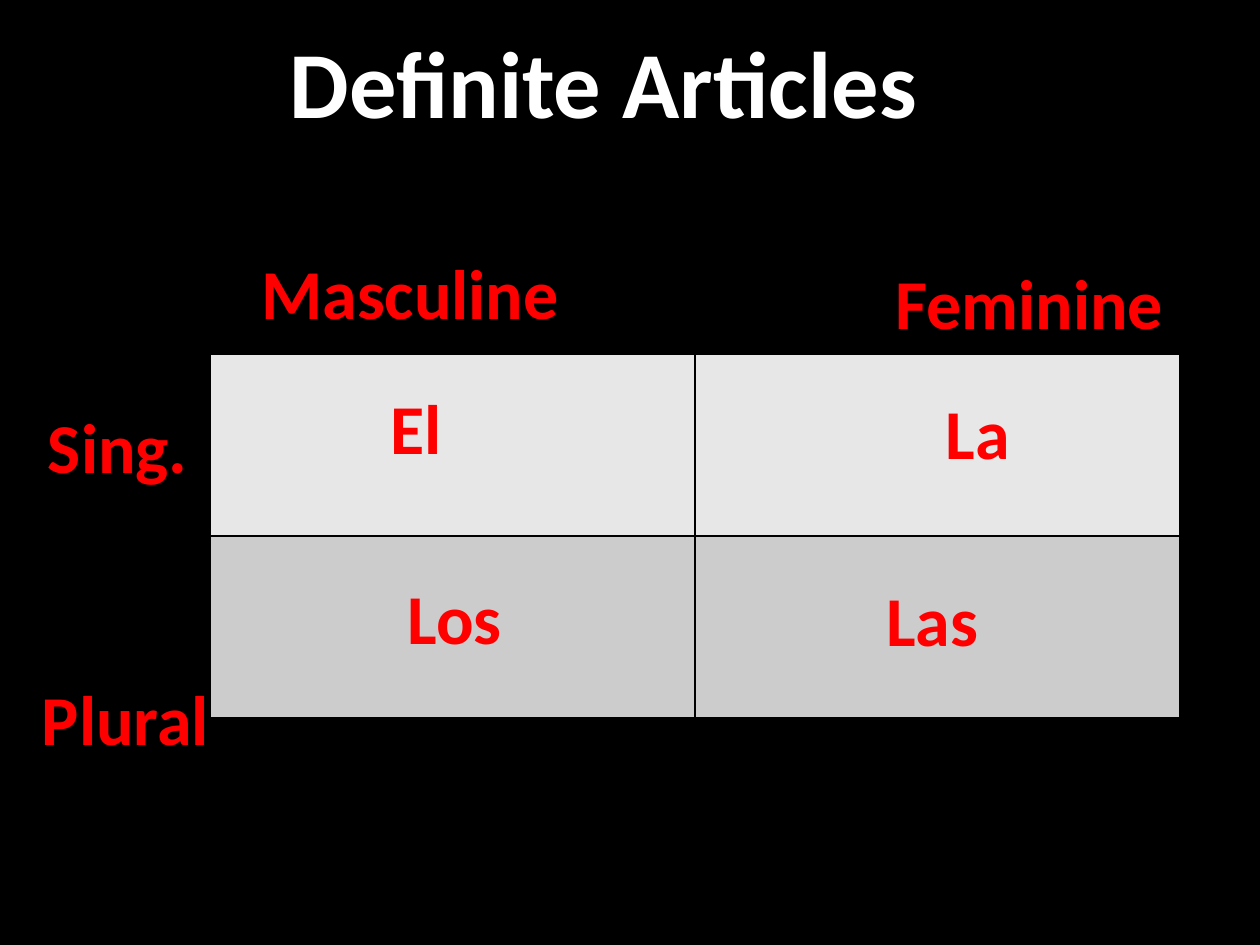
from dataclasses import dataclass

from lxml.etree import SubElement
from pptx import Presentation
from pptx.dml.color import RGBColor
from pptx.enum.text import MSO_AUTO_SIZE, PP_ALIGN
from pptx.oxml.ns import qn
from pptx.util import Inches, Pt


@dataclass(frozen=True)
class Theme:
    font: str = "Calibri"
    background: str = "000000"
    title: str = "FFFFFF"
    label: str = "FF0000"
    border: str = "000000"
    row_fills: tuple = ("E7E7E7", "CCCCCC")
    title_size: int = 54
    label_size: int = 40
    border_width: int = 1


class SlideBuilder:
    def __init__(self, slide, theme):
        self.slide = slide
        self.theme = theme
        fill = slide.background.fill
        fill.solid()
        fill.fore_color.rgb = RGBColor.from_string(theme.background)

    def text(self, words, left, top, width, height, size, color, wrap=False):
        box = self.slide.shapes.add_textbox(
            Inches(left), Inches(top), Inches(width), Inches(height))
        frame = box.text_frame
        frame.word_wrap = wrap
        frame.auto_size = MSO_AUTO_SIZE.SHAPE_TO_FIT_TEXT
        paragraph = frame.paragraphs[0]
        paragraph.alignment = PP_ALIGN.CENTER
        run = paragraph.add_run()
        run.text = words
        run.font.name = self.theme.font
        run.font.size = Pt(size)
        run.font.bold = True
        run.font.color.rgb = RGBColor.from_string(color)

    def title(self, words, left, top, width, height):
        self.text(words, left, top, width, height,
                  self.theme.title_size, self.theme.title, wrap=True)

    def label(self, words, left, top, width, wrap=False):
        self.text(words, left, top, width, 0.77,
                  self.theme.label_size, self.theme.label, wrap)

    def grid(self, left, top, width, height, columns):
        """Add an empty table with one fill per row."""
        fills = self.theme.row_fills
        table = self.slide.shapes.add_table(
            len(fills), columns, Inches(left), Inches(top),
            Inches(width), Inches(height)).table
        table.first_row = False
        table.horz_banding = False
        for row, color in zip(table.rows, fills):
            for cell in row.cells:
                self.cell_borders(cell)
                cell.fill.solid()
                cell.fill.fore_color.rgb = RGBColor.from_string(color)

    def cell_borders(self, cell):
        properties = cell._tc.get_or_add_tcPr()
        for side in ("lnL", "lnR", "lnT", "lnB"):
            line = SubElement(properties, qn(f"a:{side}"),
                              w=str(Pt(self.theme.border_width)))
            fill = SubElement(line, qn("a:solidFill"))
            SubElement(fill, qn("a:srgbClr"), val=self.theme.border)


def main():
    presentation = Presentation()
    presentation.slide_width = Inches(10)
    presentation.slide_height = Inches(7.5)
    slide = presentation.slides.add_slide(presentation.slide_layouts[6])
    builder = SlideBuilder(slide, Theme())

    builder.title("Definite Articles", 0.22, 0.14, 9.14, 1.01)
    builder.grid(1.67, 2.81, 7.69, 2.89, columns=2)

    builder.label("Sing.", -0.08, 3.15, 2.03, wrap=True)
    for words, left, top, width in (
        ("Masculine", 1.96, 1.93, 2.59),
        ("Feminine", 6.99, 2.01, 2.36),
        ("Plural", 0.22, 5.31, 1.55),
        ("El", 3, 3, 0.61),
        ("La", 7.4, 3.04, 0.72),
        ("Los", 3.13, 4.51, 0.96),
        ("Las", 6.93, 4.53, 0.94),
    ):
        builder.label(words, left, top, width)

    presentation.save("out.pptx")


if __name__ == "__main__":
    main()
